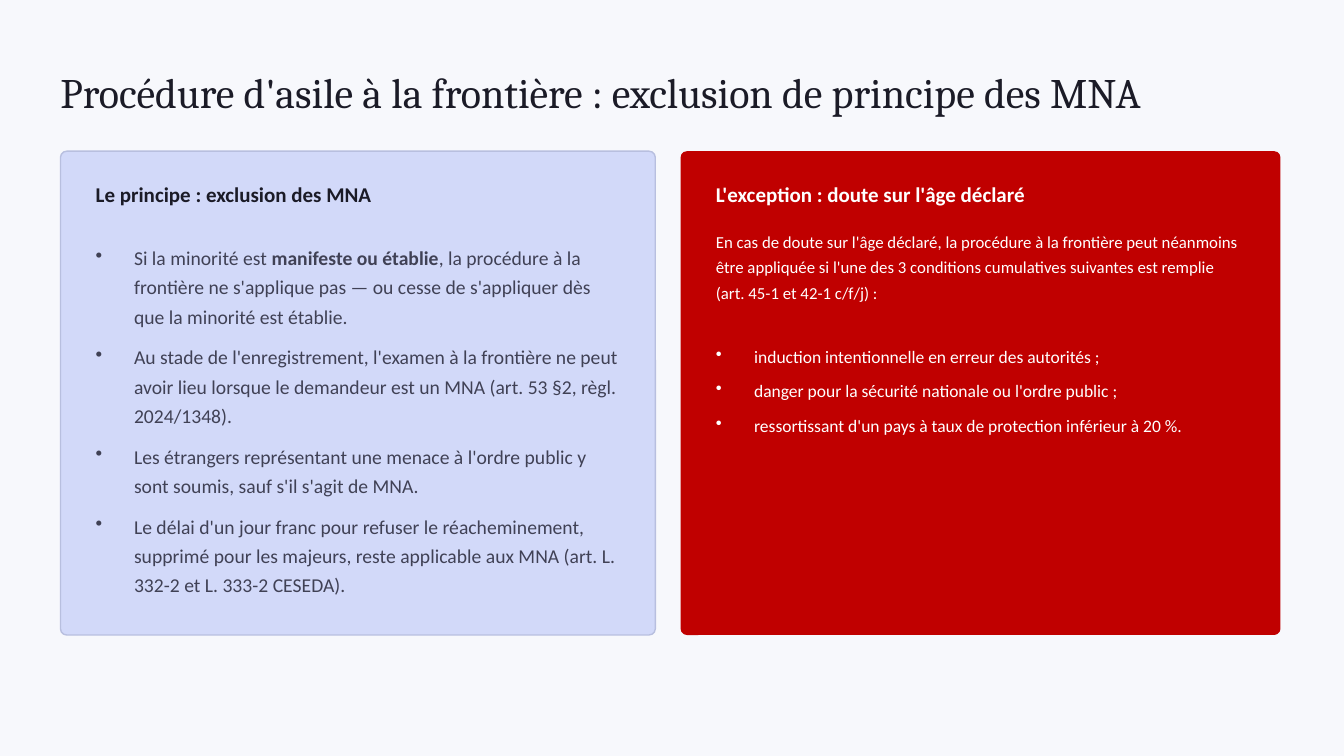
import lxml.etree
import pptx
import pptx.dml.color
import pptx.enum.shapes
import pptx.enum.text
import pptx.oxml.ns
import pptx.util

Inches = pptx.util.Inches
Pt = pptx.util.Pt

COLORS = {
    "background": "F7F8FC",
    "ink": "1B1B27",
    "body": "404155",
    "lavender": "D2D9F9",
    "border": "B8BFDF",
    "red": "C00000",
    "white": "FFFFFF",
}

TITLE = "Procédure d'asile à la frontière : exclusion de principe des MNA"
CARDS = [
    {
        "left": 0.6, "width": 5.9, "fill": "lavender", "border": "border",
        "heading": "Le principe : exclusion des MNA",
        "heading_color": "ink", "body_color": "body",
        "intro": None,
        "bullets": [
            [("Si la minorité est ", False), ("manifeste ou établie", True),
             (", la procédure à la frontière ne s'applique pas — ou cesse de "
              "s'appliquer dès que la minorité est établie.", False)],
            "Au stade de l'enregistrement, l'examen à la frontière ne peut avoir lieu "
            "lorsque le demandeur est un MNA (art. 53 §2, règl. 2024/1348).",
            "Les étrangers représentant une menace à l'ordre public y sont soumis, "
            "sauf s'il s'agit de MNA.",
            "Le délai d'un jour franc pour refuser le réacheminement, supprimé pour les "
            "majeurs, reste applicable aux MNA (art. L. 332-2 et L. 333-2 CESEDA).",
        ],
        "bullets_top": 2.2, "bullets_height": 3.9, "bullet_size": 14, "bullet_gap": 8,
    },
    {
        "left": 6.75, "width": 5.95, "fill": "red", "border": None,
        "heading": "L'exception : doute sur l'âge déclaré",
        "heading_color": "white", "body_color": "white",
        "intro": "En cas de doute sur l'âge déclaré, la procédure à la frontière peut "
                 "néanmoins être appliquée si l'une des 3 conditions cumulatives "
                 "suivantes est remplie (art. 45-1 et 42-1 c/f/j) :",
        "bullets": [
            "induction intentionnelle en erreur des autorités ;",
            "danger pour la sécurité nationale ou l'ordre public ;",
            "ressortissant d'un pays à taux de protection inférieur à 20 %.",
        ],
        "bullets_top": 3.2, "bullets_height": 1.3, "bullet_size": 12.5, "bullet_gap": 6,
    },
]
CARD_TOP, CARD_HEIGHT, PADDING = 1.5, 4.8, 0.35
CORNER, BULLET_INDENT = 0.013, 0.38


def color(name):
    return pptx.dml.color.RGBColor.from_string(COLORS[name])


def add_bullet(paragraph):
    properties = paragraph._p.get_or_add_pPr()
    indent = Inches(BULLET_INDENT)
    properties.set("marL", str(indent))
    properties.set("indent", str(-indent))
    bullet = lxml.etree.SubElement(properties, pptx.oxml.ns.qn("a:buChar"))
    bullet.set("char", "•")


def add_text(slide, box, paragraphs, size, color_name, font="Calibri", bold=None,
             spacing=None, gap=None, bulleted=False):
    frame = slide.shapes.add_textbox(*map(Inches, box)).text_frame
    frame.word_wrap = True
    frame.vertical_anchor = pptx.enum.text.MSO_ANCHOR.MIDDLE
    frame.margin_left = frame.margin_right = frame.margin_top = frame.margin_bottom = 0
    for index, content in enumerate(paragraphs):
        paragraph = frame.add_paragraph() if index else frame.paragraphs[0]
        if spacing:
            paragraph.line_spacing = spacing
        if gap:
            paragraph.space_after = Pt(gap)
        if bulleted:
            add_bullet(paragraph)
        paragraph.font.name = font
        paragraph.font.size = Pt(size)
        paragraph.font.bold = bold
        paragraph.font.color.rgb = color(color_name)
        pieces = [(content, False)] if isinstance(content, str) else content
        for text, emphasized in pieces:
            run = paragraph.add_run()
            run.text = text
            if emphasized:
                run.font.bold = True


def add_card(slide, card):
    shape = slide.shapes.add_shape(
        pptx.enum.shapes.MSO_SHAPE.ROUNDED_RECTANGLE,
        Inches(card["left"]), Inches(CARD_TOP), Inches(card["width"]), Inches(CARD_HEIGHT))
    shape.adjustments[0] = CORNER
    shape.shadow.inherit = False
    shape.fill.solid()
    shape.fill.fore_color.rgb = color(card["fill"])
    if card["border"]:
        shape.line.color.rgb = color(card["border"])
        shape.line.width = Pt(1)
    else:
        shape.line.fill.background()

    left = card["left"] + PADDING
    width = card["width"] - 2 * PADDING
    add_text(slide, (left, CARD_TOP + 0.2, width, 0.45), [card["heading"]], 15,
             card["heading_color"], bold=True)
    if card["intro"]:
        add_text(slide, (left, CARD_TOP + 0.65, width, 0.95), [card["intro"]], 12,
                 card["body_color"], spacing=1.25)
    add_text(slide, (left, card["bullets_top"], width, card["bullets_height"]),
             card["bullets"], card["bullet_size"], card["body_color"],
             spacing=1.25, gap=card["bullet_gap"], bulleted=True)


def main():
    presentation = pptx.Presentation()
    presentation.slide_width = Inches(13.33)
    presentation.slide_height = Inches(7.5)
    slide = presentation.slides.add_slide(presentation.slide_layouts[6])
    slide.background.fill.solid()
    slide.background.fill.fore_color.rgb = color("background")
    add_text(slide, (0.6, 0.45, 12.13, 0.9), [TITLE], 30, "ink", font="Cambria", spacing=1.04)
    for card in CARDS:
        add_card(slide, card)
    presentation.save("out.pptx")


if __name__ == "__main__":
    main()
